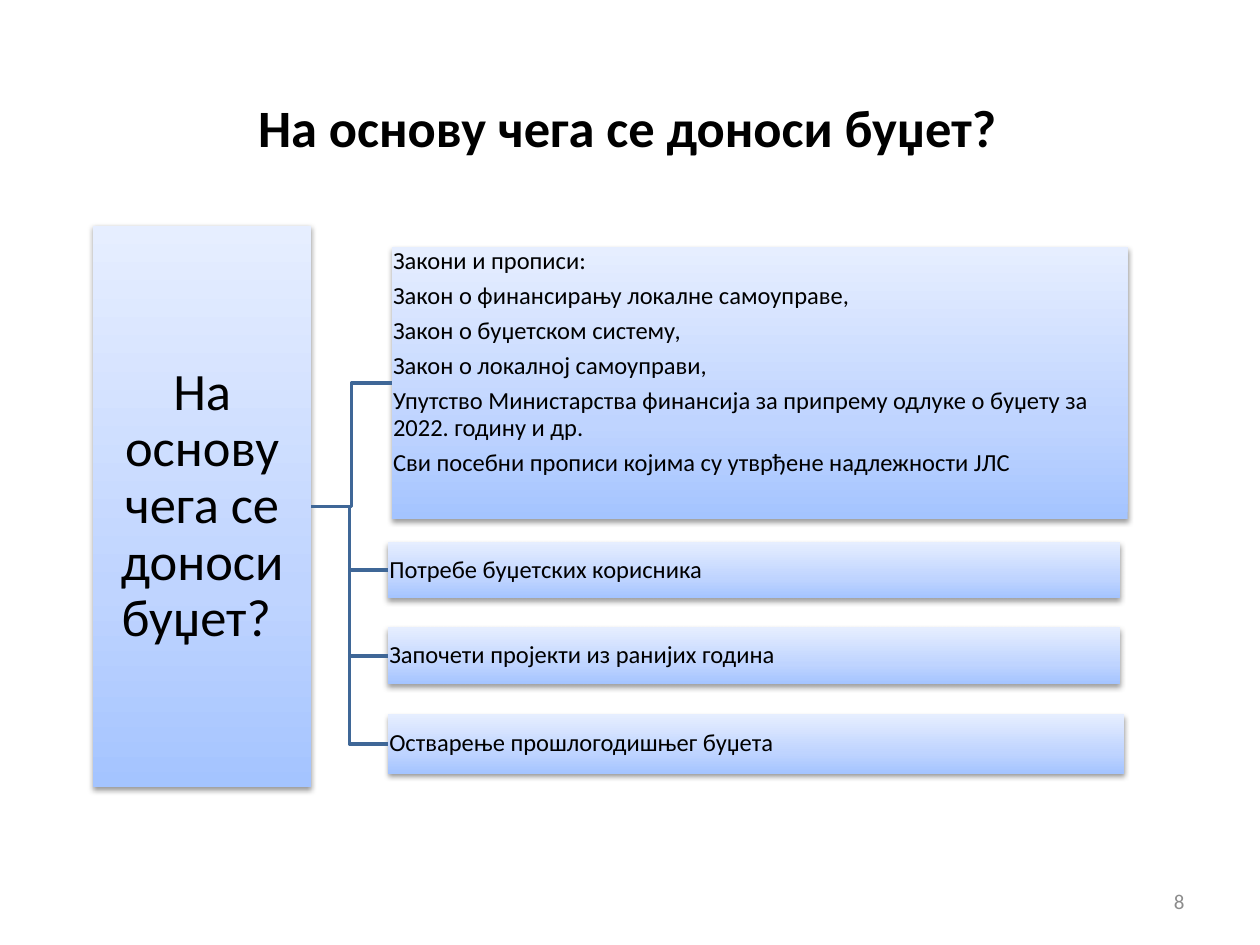
from lxml import etree
from pptx import Presentation
from pptx import util as u
from pptx.dml.color import RGBColor
from pptx.enum import shapes, text
from pptx.oxml import parse_xml
from pptx.oxml.ns import nsdecls, qn

COLORS = {"ink": "000000", "muted": "8C8C8C", "line": "3F6797",
          "deep": "A4C4FF", "middle": "BFD4FF", "pale": "E6EEFF"}
ALIGN = text.PP_ALIGN
ANCHOR = text.MSO_ANCHOR


def write(shape, lines, size, color="ink", bold=False, align=ALIGN.LEFT,
          anchor=ANCHOR.MIDDLE, inset=None, spacing=None, after=0):
    """Fill a shape with paragraphs; after is a share of the text size."""
    frame = shape.text_frame
    frame.word_wrap = True
    frame.vertical_anchor = anchor
    if inset is not None:
        frame.margin_left = frame.margin_right = u.Inches(inset)
        frame.margin_top = frame.margin_bottom = u.Inches(inset)
    for number, line in enumerate(lines):
        para = frame.add_paragraph() if number else frame.paragraphs[0]
        para.alignment = align
        para.line_spacing = spacing
        para.space_after = u.Pt(size * after)
        span = para.add_run()
        span.text = line
        span.font.name = "Calibri"
        span.font.size = u.Pt(size)
        span.font.bold = bold
        span.font.color.rgb = RGBColor.from_string(COLORS[color])


class Painter:
    def __init__(self, page):
        self.page = page

    def label(self, place, line, size, **style):
        box = self.page.shapes.add_textbox(*map(u.Inches, place))
        write(box, [line], size, **style)

    def panel(self, place, lines, size, **style):
        """Rectangle with the blue gradient and a soft shadow."""
        box = self.page.shapes.add_shape(
            shapes.MSO_SHAPE.RECTANGLE, *map(u.Inches, place))
        box.line.fill.background()
        stops = "".join(
            f'<a:gs pos="{share * 1000}"><a:srgbClr val="{COLORS[name]}"/></a:gs>'
            for share, name in ((0, "deep"), (35, "middle"), (100, "pale")))
        outline = box._element.spPr.find(qn("a:ln"))
        outline.addprevious(parse_xml(
            f'<a:gradFill {nsdecls("a")} rotWithShape="1"><a:gsLst>{stops}</a:gsLst>'
            '<a:lin ang="16200000" scaled="0"/></a:gradFill>'))
        outline.addnext(parse_xml(
            f'<a:effectLst {nsdecls("a")}><a:outerShdw blurRad="{u.Pt(3.1)}" '
            f'dist="{u.Pt(1.6)}" dir="5400000" rotWithShape="0">'
            '<a:srgbClr val="000000"><a:alpha val="38000"/></a:srgbClr>'
            '</a:outerShdw></a:effectLst>'))
        write(box, lines, size, spacing=0.9, after=0.35, **style)
        return box

    def branch(self, start, end):
        """Elbow from the right side of one box to the left side of another."""
        link = self.page.shapes.add_connector(
            shapes.MSO_CONNECTOR.ELBOW, 0, 0, 0, 0)
        link.begin_connect(start, 3)
        link.end_connect(end, 1)
        link.line.width = u.Pt(2)
        link.line.color.rgb = RGBColor.from_string(COLORS["line"])
        etree.SubElement(link._element.spPr, qn("a:effectLst"))


def main():
    deck = Presentation()
    deck.slide_width, deck.slide_height = u.Inches(10), u.Inches(7.5)
    painter = Painter(deck.slides.add_slide(deck.slide_layouts[6]))

    # Title and page number
    painter.label((0.48, 0.54, 9, 0.93), "На основу чега се доноси буџет?", 30,
                  bold=True, align=ALIGN.CENTER)
    painter.label((7.17, 6.95, 2.33, 0.4), "8", 12, color="muted",
                  align=ALIGN.RIGHT)

    # Question on the left
    question = painter.panel((0.74, 1.79, 1.73, 4.46),
                             ["На основу чега се доноси буџет? "], 30,
                             align=ALIGN.CENTER, inset=0.02)

    # Sources of the budget, each joined to the question
    laws = ["Закони и прописи:",
            "Закон о финансирању локалне самоуправе,",
            "Закон о буџетском систему,",
            "Закон о локалној самоуправи,",
            "Упутство Министарства финансија за припрему одлуке о буџету "
            "за 2022. годину и др.",
            "Сви посебни прописи којима су утврђене надлежности ЈЛС"]
    sources = [
        ((3.11, 1.96, 5.84, 2.16), laws, ANCHOR.TOP),
        ((3.08, 4.3, 5.81, 0.45), ["Потребе буџетских корисника"], ANCHOR.MIDDLE),
        ((3.08, 4.98, 5.81, 0.45), ["Започети пројекти из ранијих година"],
         ANCHOR.MIDDLE),
        ((3.08, 5.67, 5.84, 0.47), ["Остварење прошлогодишњег буџета"],
         ANCHOR.MIDDLE),
    ]
    for place, lines, anchor in sources:
        source = painter.panel(place, lines, 14, anchor=anchor, inset=0.01)
        painter.branch(question, source)

    deck.save("out.pptx")


if __name__ == "__main__":
    main()
